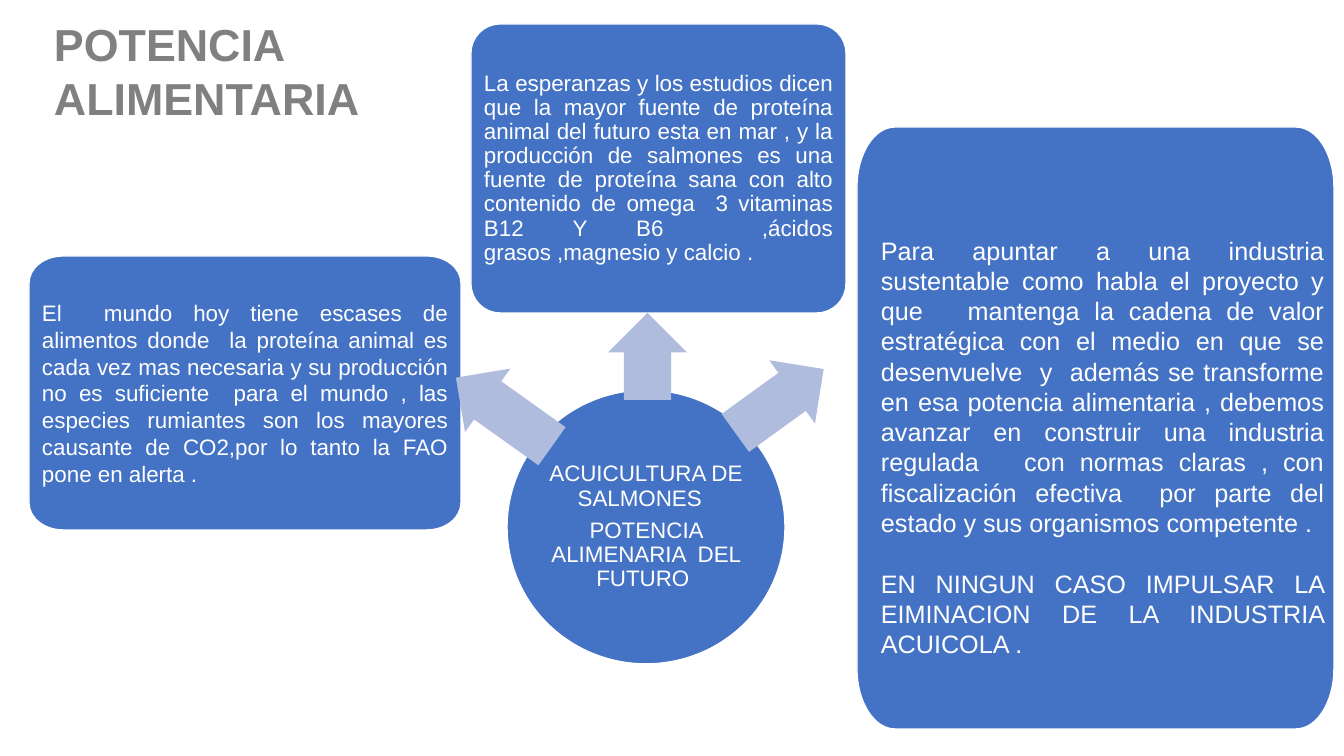
import pptx
import pptx.dml.color
import pptx.enum.shapes
import pptx.enum.text
import pptx.oxml.xmlchemy
import pptx.util

EMU_PER_PX = 914400 / 100.8
FONT = "Arial"
COLORS = {"card": "4472C4", "arrow": "B0BCDE", "title": "808080", "white": "FFFFFF"}
ALIGN = pptx.enum.text.PP_ALIGN
ANCHOR = pptx.enum.text.MSO_ANCHOR
SHAPE = pptx.enum.shapes.MSO_SHAPE
ARC_PULL = 0.55

TITLE = "POTENCIA ALIMENTARIA"
CORE = ["ACUICULTURA DE SALMONES  ", "POTENCIA ALIMENARIA  DEL FUTURO "]
SCARCITY = (
    "El  mundo hoy tiene escases de alimentos donde  la proteína animal es cada vez mas "
    "necesaria y su producción no es suficiente  para el mundo , las especies rumiantes "
    "son los mayores causante de CO2,por lo tanto la FAO pone en alerta ."
)
PROTEIN = (
    "La esperanzas y los estudios dicen que la mayor fuente de proteína animal del futuro "
    "esta en mar , y la producción de salmones es una fuente de proteína sana con alto "
    "contenido de omega  3 vitaminas B12 Y B6  ,ácidos grasos ,magnesio y calcio ."
)
REGULATION = [
    "Para apuntar a una industria sustentable como habla el proyecto y que   mantenga la "
    "cadena de valor estratégica con el medio en que se desenvuelve  y  además se "
    "transforme en esa potencia alimentaria , debemos avanzar en construir una industria "
    "regulada   con normas claras , con fiscalización efectiva  por parte del estado y "
    "sus organismos competente .",
    "EN NINGUN CASO IMPULSAR LA EIMINACION DE LA INDUSTRIA ACUICOLA .",
]


def px(length):
    return pptx.util.Emu(round(length * EMU_PER_PX))


def rgb(name):
    return pptx.dml.color.RGBColor.from_string(COLORS[name])


def write(shape, texts, size, align, color="white", bold=False, inset=None,
          anchor=ANCHOR.MIDDLE, spacing=1.0, after=0, gap=0):
    frame = shape.text_frame
    frame.word_wrap = True
    frame.vertical_anchor = anchor
    if inset is not None:
        frame.margin_left = frame.margin_right = px(inset)
        frame.margin_top = frame.margin_bottom = px(inset)
    for index, text in enumerate(texts):
        paragraph = frame.paragraphs[0] if index == 0 else frame.add_paragraph()
        paragraph.text = text
        paragraph.alignment = align
        paragraph.line_spacing = spacing
        paragraph.space_before = pptx.util.Pt(gap if index else 0)
        paragraph.space_after = pptx.util.Pt(after)
        paragraph.font.name = FONT
        paragraph.font.size = pptx.util.Pt(size)
        paragraph.font.bold = bold
        paragraph.font.color.rgb = rgb(color)


def paint(shape, fill, outlined):
    shape.shadow.inherit = False
    shape.fill.solid()
    shape.fill.fore_color.rgb = rgb(fill)
    if outlined:
        shape.line.color.rgb = rgb("white")
        shape.line.width = pptx.util.Pt(1)
    else:
        shape.line.fill.background()
    return shape


def toward(start, corner):
    return tuple(a + ARC_PULL * (b - a) for a, b in zip(start, corner))


def bend(segment, points):
    curve = pptx.oxml.xmlchemy.OxmlElement("a:cubicBezTo")
    for x, y in points:
        point = pptx.oxml.xmlchemy.OxmlElement("a:pt")
        point.set("x", str(px(x)))
        point.set("y", str(px(y)))
        curve.append(point)
    segment.getparent().replace(segment, curve)


def add_card(slide, left, top, width, height, radius_x, radius_y):
    far_x, far_y = width - radius_x, height - radius_y
    outline = [
        (0, radius_y), (radius_x, 0), (far_x, 0), (width, radius_y),
        (width, far_y), (far_x, height), (radius_x, height), (0, far_y),
    ]
    corners = [(0, 0), (width, 0), (width, height), (0, height)]
    vertices = [(px(x), px(y)) for x, y in outline]
    builder = slide.shapes.build_freeform(*vertices[0])
    builder.add_line_segments(vertices[1:], close=True)
    card = builder.convert_to_shape(px(left), px(top))
    segments = card._element.xpath(".//a:lnTo")
    for corner, start, end, segment in zip(corners, outline[::2], outline[1::2], segments[::2]):
        bend(segment, [toward(start, corner), toward(end, corner), end])
    return paint(card, "card", True)


def add_circle(slide, *box):
    circle = slide.shapes.add_shape(SHAPE.OVAL, *map(px, box))
    return paint(circle, "card", True)


def add_arrow(slide, rotation, *box):
    arrow = slide.shapes.add_shape(SHAPE.LEFT_ARROW, *map(px, box))
    arrow.adjustments[0] = 0.6
    arrow.adjustments[1] = 0.5
    arrow.rotation = rotation
    paint(arrow, "arrow", False)


def add_text(slide, *box):
    return slide.shapes.add_textbox(*map(px, box))


def main():
    deck = pptx.Presentation()
    deck.slide_width, deck.slide_height = px(1344), px(756)
    slide = deck.slides.add_slide(deck.slide_layouts[6])

    title = add_text(slide, 44, 11, 390, 119)
    write(title, [TITLE], 32, ALIGN.LEFT, color="title", bold=True)

    core = add_circle(slide, 507, 390, 278, 274)
    write(core, CORE, 16, ALIGN.CENTER, inset=0, spacing=0.9, after=5.6)

    scarcity = add_card(slide, 29, 256, 432, 274, 34, 27)
    write(scarcity, [SCARCITY], 16, ALIGN.JUSTIFY, inset=13, after=5.6)

    protein = add_card(slide, 471, 24, 375, 289, 29, 29)
    write(protein, [PROTEIN], 16, ALIGN.JUSTIFY, inset=13, spacing=0.9, after=5.6)

    add_arrow(slide, 35.5, 445, 373, 118, 78)
    add_arrow(slide, 90, 604, 317, 87, 79)

    add_card(slide, 857, 127, 477, 602, 38, 60)
    add_arrow(slide, 144.1, 725, 362, 109, 78)
    regulation = add_text(slide, 871, 230, 463, 437)
    write(regulation, REGULATION, 18, ALIGN.JUSTIFY, anchor=ANCHOR.TOP, gap=22)

    deck.save("out.pptx")


if __name__ == "__main__":
    main()
